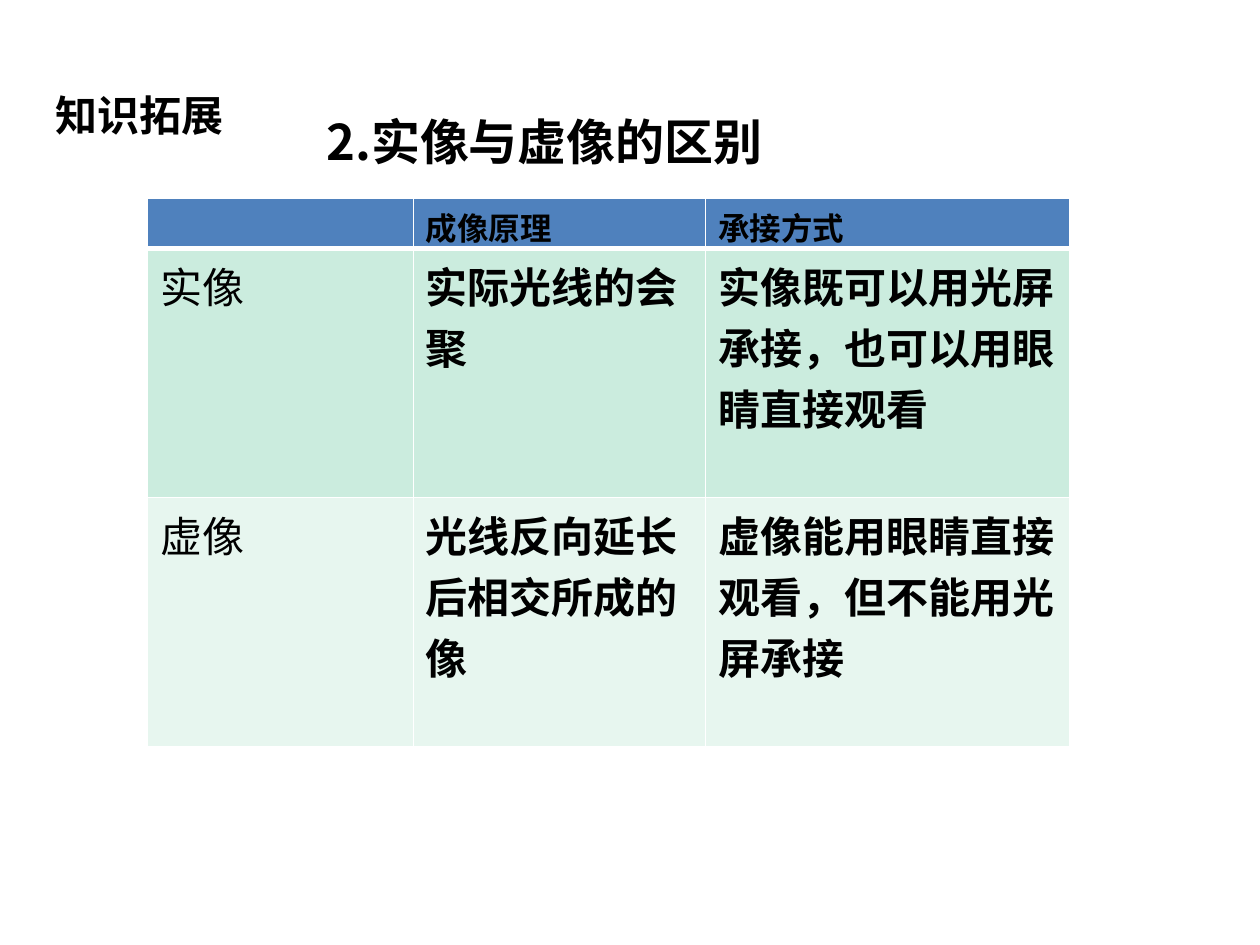
from lxml.etree import SubElement
from pptx import Presentation
from pptx.dml.color import RGBColor
from pptx.enum.text import MSO_ANCHOR, MSO_AUTO_SIZE, PP_ALIGN
from pptx.oxml import parse_xml
from pptx.oxml.ns import nsdecls, qn
from pptx.util import Inches, Pt

FONT = "Noto Sans CJK SC"
COLUMN_WIDTHS = (2.11, 2.32, 2.89)
ROW_HEIGHTS = (0.4, 1.98, 1.98)
ROW_FILLS = ("4F81BD", "CBECDE", "E7F6EF")
ROWS = (
    ("", "成像原理", "承接方式"),
    ("实像", "实际光线的会聚", "实像既可以用光屏承接，也可以用眼睛直接观看"),
    ("虚像", "光线反向延长后相交所成的像", "虚像能用眼睛直接观看，但不能用光屏承接"),
)


def color(value):
    return RGBColor.from_string(value)


def add_text(paragraph, text, size, bold=True):
    run = paragraph.add_run()
    run.text = text
    run.font.size = Pt(size)
    run.font.bold = bold
    run.font.color.rgb = color("000000")
    run.font.name = FONT
    SubElement(run.font._element, qn("a:ea"), typeface=FONT)


def place_label(slide, left, top, width, height):
    label = slide.shapes.add_textbox(Inches(left), Inches(top), Inches(width), Inches(height))
    label.text_frame.word_wrap = True
    label.text_frame.auto_size = MSO_AUTO_SIZE.SHAPE_TO_FIT_TEXT
    add_text(label.text_frame.paragraphs[0], "知识拓展", 24)


def place_title(slide, left, top, width, height):
    title = slide.shapes.title
    title.left, title.top = Inches(left), Inches(top)
    title.width, title.height = Inches(width), Inches(height)
    frame = title.text_frame
    frame.word_wrap = True
    frame.auto_size = MSO_AUTO_SIZE.SHAPE_TO_FIT_TEXT
    frame.vertical_anchor = MSO_ANCHOR.TOP
    paragraph = frame.paragraphs[0]
    paragraph.alignment = PP_ALIGN.LEFT
    paragraph.line_spacing = 1.5
    add_text(paragraph, "2.实像与虚像的区别", 28)


def set_borders(cell, top, bottom):
    properties = cell._tc.get_or_add_tcPr()
    sides = (("L", 1), ("R", 1), ("T", top), ("B", bottom))
    for index, (side, width) in enumerate(sides):
        properties.insert(index, parse_xml(
            f'<a:ln{side} {nsdecls("a")} w="{Pt(width)}"><a:solidFill>'
            f'<a:srgbClr val="FFFFFF"/></a:solidFill></a:ln{side}>'
        ))


def place_table(slide, left, top, width, height):
    table = slide.shapes.add_table(
        len(ROWS), len(COLUMN_WIDTHS),
        Inches(left), Inches(top), Inches(width), Inches(height),
    ).table
    for column, column_width in zip(table.columns, COLUMN_WIDTHS):
        column.width = Inches(column_width)
    for row_index, texts in enumerate(ROWS):
        table.rows[row_index].height = Inches(ROW_HEIGHTS[row_index])
        is_header = row_index == 0
        for column_index, text in enumerate(texts):
            cell = table.cell(row_index, column_index)
            cell.fill.solid()
            cell.fill.fore_color.rgb = color(ROW_FILLS[row_index])
            set_borders(cell, 3 if row_index == 1 else 1, 3 if is_header else 1)
            if text:
                add_text(cell.text_frame.paragraphs[0], text,
                         18 if is_header else 24, column_index > 0)


def main():
    presentation = Presentation()
    presentation.slide_width = Inches(10)
    presentation.slide_height = Inches(7.5)
    slide = presentation.slides.add_slide(presentation.slide_layouts[5])
    place_label(slide, 0.34, 0.66, 2.01, 0.51)
    place_title(slide, 2.49, 0.6, 6.46, 0.81)
    place_table(slide, 1.17, 1.57, sum(COLUMN_WIDTHS), sum(ROW_HEIGHTS))
    presentation.save("out.pptx")


if __name__ == "__main__":
    main()
